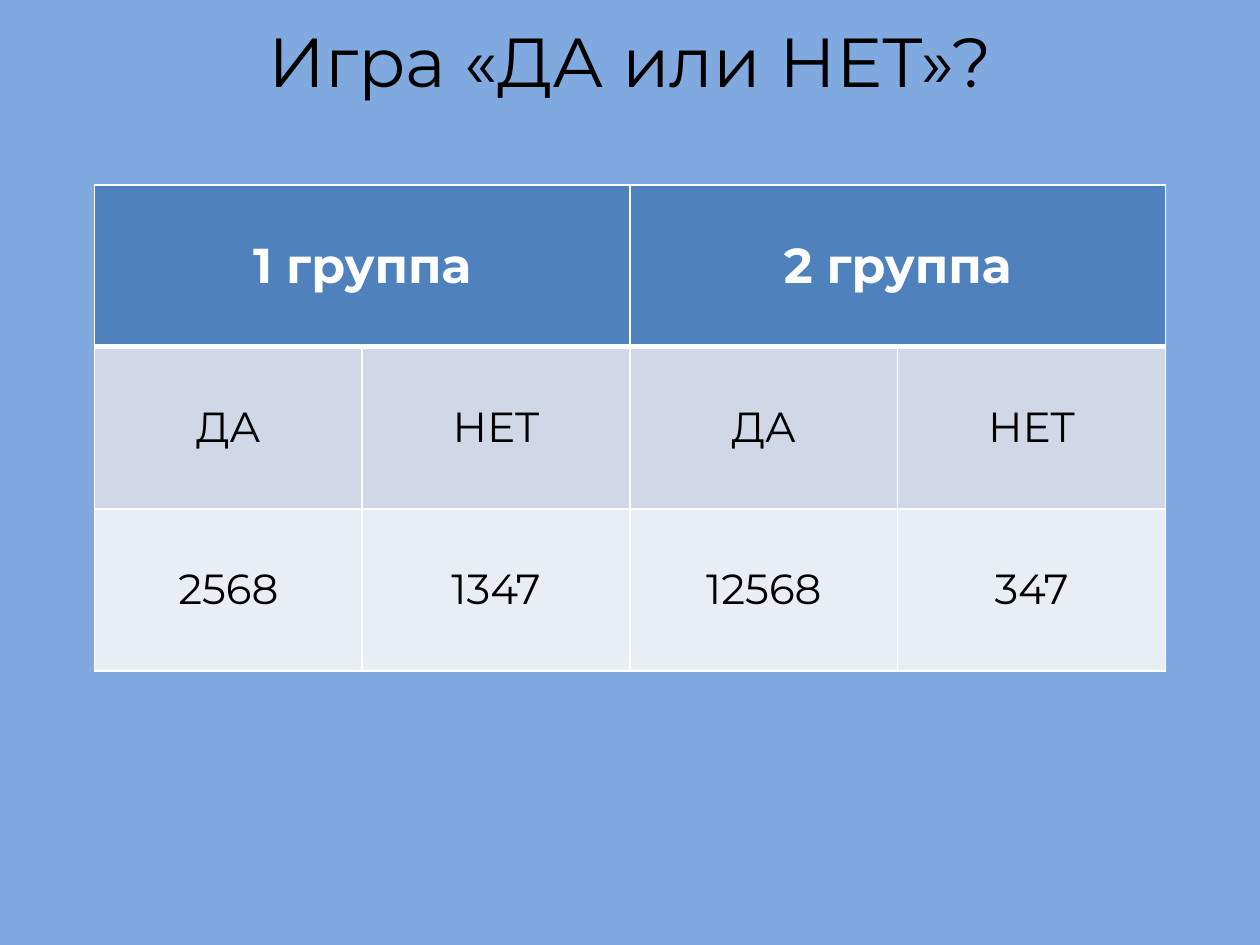
"""Build the yes-or-no game slide: a title above a table of answers for two groups."""
from dataclasses import dataclass

from lxml.etree import SubElement
from pptx import Presentation
from pptx.dml.color import RGBColor as RGB
from pptx.enum.text import MSO_ANCHOR as Anchor, PP_ALIGN as Align
from pptx.oxml.ns import qn
from pptx.util import Pt


@dataclass(frozen=True)
class Theme:
    font: str = "Montserrat"
    background: str = "80AADF"
    text: str = "000000"
    border: str = "FFFFFF"
    header_text: str = "FFFFFF"
    header_fill: str = "4F81BD"
    answer_fill: str = "D0D8E8"
    number_fill: str = "E9EDF4"
    title_size: float = 39.6
    header_size: float = 28
    body_size: float = 24
    thin: float = 1
    thick: float = 3


@dataclass(frozen=True)
class Row:
    texts: tuple[str, ...]
    fill: str
    color: str
    size: float
    bold: bool
    top: float
    bottom: float


THEME = Theme()
COLUMNS = 4
COLUMN_WIDTH, ROW_HEIGHT = 153, 92.6
ROWS = (
    Row(("1 группа", "2 группа"), THEME.header_fill, THEME.header_text,
        THEME.header_size, True, THEME.thin, THEME.thick),
    Row(("ДА", "НЕТ", "ДА", "НЕТ"), THEME.answer_fill, THEME.text,
        THEME.body_size, False, THEME.thick, THEME.thin),
    Row(("2568", "1347", "12568", "347"), THEME.number_fill, THEME.text,
        THEME.body_size, False, THEME.thin, THEME.thin),
)


def write(tf, text: str, size: float, color: str, bold: bool = False) -> None:
    p = tf.paragraphs[0]
    p.alignment = Align.CENTER
    r = p.add_run()
    r.text = text
    r.font.name = THEME.font
    r.font.size = Pt(size)
    r.font.bold = bold
    r.font.color.rgb = RGB.from_string(color)


def add_title(s, text: str) -> None:
    sp = s.shapes.add_textbox(Pt(36), Pt(0), Pt(648), Pt(111.6))
    tf = sp.text_frame
    tf.word_wrap = True
    tf.vertical_anchor = Anchor.MIDDLE
    tf.margin_bottom = Pt(47)
    write(tf, text, THEME.title_size, THEME.text)


def style_cell(cell, row: Row) -> None:
    tc_pr = cell._tc.get_or_add_tcPr()
    widths = {"L": THEME.thin, "R": THEME.thin, "T": row.top, "B": row.bottom}
    for side, width in widths.items():
        ln = SubElement(tc_pr, qn(f"a:ln{side}"), w=str(Pt(width)))
        fill = SubElement(ln, qn("a:solidFill"))
        SubElement(fill, qn("a:srgbClr"), val=THEME.border)
    cell.fill.solid()
    cell.fill.fore_color.rgb = RGB.from_string(row.fill)
    cell.vertical_anchor = Anchor.MIDDLE


def add_answers(s, rows: tuple[Row, ...]) -> None:
    table = s.shapes.add_table(
        len(rows), COLUMNS, Pt(54), Pt(105.6),
        Pt(COLUMNS * COLUMN_WIDTH), Pt(len(rows) * ROW_HEIGHT)).table
    for column in table.columns:
        column.width = Pt(COLUMN_WIDTH)
    for i, row in enumerate(rows):
        table.rows[i].height = Pt(ROW_HEIGHT)
        for j in range(COLUMNS):
            style_cell(table.cell(i, j), row)
        span = COLUMNS // len(row.texts)
        for j, text in enumerate(row.texts):
            cell = table.cell(i, j * span)
            if span > 1:
                cell.merge(table.cell(i, (j + 1) * span - 1))
            write(cell.text_frame, text, row.size, row.color, row.bold)


def main() -> None:
    prs = Presentation()
    prs.slide_width, prs.slide_height = Pt(720), Pt(540)
    s = prs.slides.add_slide(prs.slide_layouts[6])
    s.background.fill.solid()
    s.background.fill.fore_color.rgb = RGB.from_string(THEME.background)
    add_title(s, "Игра «ДА или НЕТ»?")
    add_answers(s, ROWS)
    prs.save("out.pptx")


if __name__ == "__main__":
    main()
